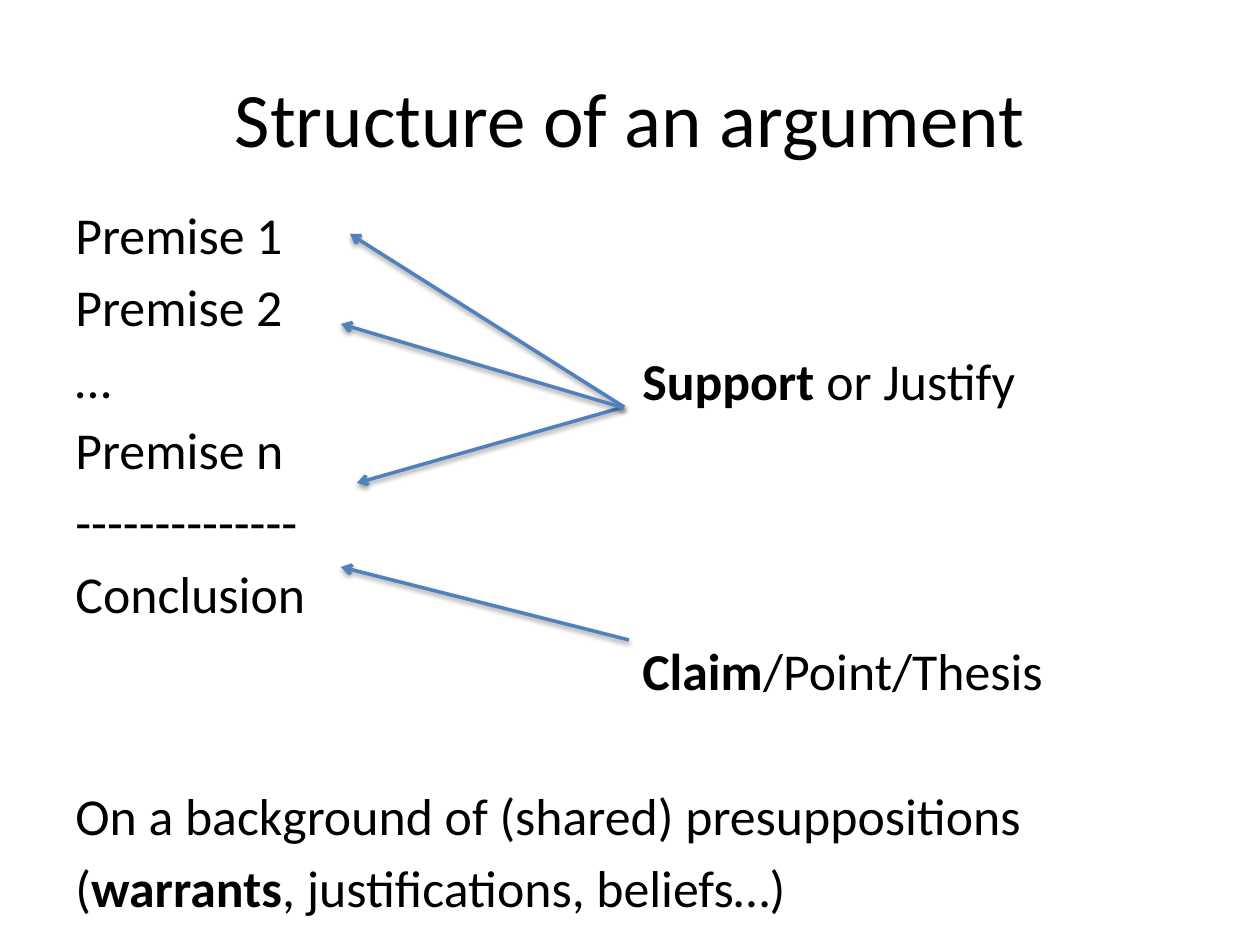
from lxml import etree
from pptx import Presentation
from pptx.dml.color import RGBColor
from pptx.enum.shapes import MSO_CONNECTOR as Conn
from pptx.enum.text import MSO_ANCHOR as Anchor, PP_ALIGN as Align
from pptx.oxml.ns import qn
from pptx.util import Pt

TITLE = "Structure of an argument"
ROW, TOP, SIZE = 72.6, 197, 29.6
BLOCKS = [
    (63, 0, 500, [[("Premise 1", 0)], [("Premise 2", 0)], [("…", 0)],
                  [("Premise n", 0)], [("--------------", 0)], [("Conclusion", 0)]]),
    (630, 2, 567, [[("Support", 1), (" or Justify", 0)]]),
    (630, 6, 567, [[("Claim", 1), ("/Point/Thesis", 0)]]),
    (63, 8, 1134, [[("On a background of (shared) presuppositions", 0)],
                   [("(", 0), ("warrants", 1), (", justifications, beliefs…)", 0)]]),
]
ARROWS = [
    (624, 407, 350, 234),
    (624, 407, 357, 483),
    (624, 408, 341, 324),
    (629, 640, 341, 567),
]


def px(n):
    return round(n * 914400 / 126)


def color(text):
    return RGBColor.from_string(text)


def add_text(x, y, w, h, rows, size, align=Align.LEFT, anchor=Anchor.TOP):
    frame = slide.shapes.add_textbox(px(x), px(y), px(w), px(h)).text_frame
    frame.word_wrap = True
    frame.vertical_anchor = anchor
    for i, row in enumerate(rows):
        para = frame.add_paragraph() if i else frame.paragraphs[0]
        para.alignment = align
        para.space_after = Pt(5.4 if len(rows) > 1 else 0)
        for text, bold in row:
            run = para.add_run()
            run.text = text
            font = run.font
            font.name, font.size, font.bold = "Calibri", Pt(size), bool(bold)
            font.color.rgb = color("000000")


def add_arrow(*ends):
    line = slide.shapes.add_connector(Conn.STRAIGHT, *map(px, ends))
    line.line.color.rgb = color("4F81BD")
    line.line.width = Pt(2)
    props = line._element.spPr
    etree.SubElement(props.find(qn("a:ln")), qn("a:tailEnd"), type="arrow")
    fx = etree.SubElement(props, qn("a:effectLst"))
    shade = etree.SubElement(fx, qn("a:outerShdw"), blurRad=str(Pt(3.1)),
                             dist=str(Pt(1.6)), dir="5400000", rotWithShape="0")
    tint = etree.SubElement(shade, qn("a:srgbClr"), val="000000")
    etree.SubElement(tint, qn("a:alpha"), val="38000")


deck = Presentation()
deck.slide_width, deck.slide_height = px(1260), px(945)
slide = deck.slides.add_slide(deck.slide_layouts[6])
add_text(63, 38, 1134, 157, [[(TITLE, 0)]], 44, Align.CENTER, Anchor.MIDDLE)
for x, row, w, rows in BLOCKS:
    add_text(x, TOP + row * ROW, w, len(rows) * ROW, rows, SIZE)
for ends in ARROWS:
    add_arrow(*ends)
deck.save("out.pptx")
